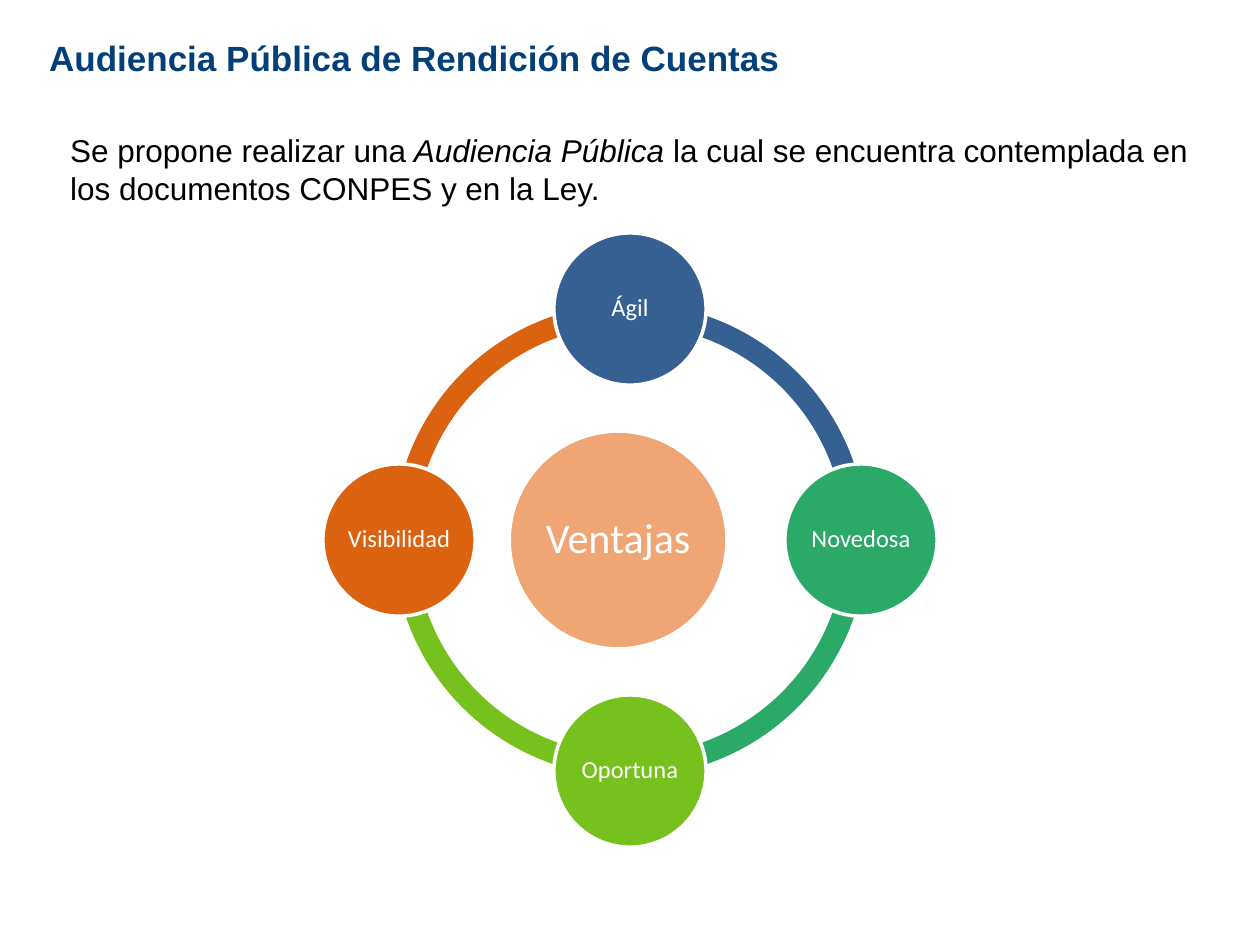
from pptx import Presentation
from pptx.dml.color import RGBColor
from pptx.enum.shapes import MSO_SHAPE
from pptx.enum.text import MSO_ANCHOR, PP_ALIGN
from pptx.util import Pt

ARC = MSO_SHAPE.BLOCK_ARC
OVAL = MSO_SHAPE.OVAL
TOP = MSO_ANCHOR.TOP
MIDDLE = MSO_ANCHOR.MIDDLE
LEFT = PP_ALIGN.LEFT
CENTER = PP_ALIGN.CENTER

COLORS = {
    "navy": "033F78",
    "black": "000000",
    "white": "FFFFFF",
    "blue": "366092",
    "teal": "2BA969",
    "green": "77C11E",
    "orange": "DB620F",
    "peach": "EFA674",
}


def color(name):
    return RGBColor.from_string(COLORS[name])


def write(frame, lines, size=18, font="Arial", ink="black", bold=False,
          align=LEFT, anchor=TOP, wrap=True, inset=None, spacing=None):
    """Fill a frame; each line is a list of (text, italic) runs."""
    frame.word_wrap = wrap
    frame.vertical_anchor = anchor
    if inset is not None:
        frame.margin_left = frame.margin_right = Pt(inset)
        frame.margin_top = frame.margin_bottom = Pt(inset)
    for i, line in enumerate(lines):
        para = frame.add_paragraph() if i else frame.paragraphs[0]
        para.alignment = align
        if spacing:
            para.line_spacing = spacing
        for text, italic in line:
            run = para.add_run()
            run.text = text
            run.font.name = font
            run.font.size = Pt(size)
            run.font.bold = bold
            run.font.italic = italic
            run.font.color.rgb = color(ink)


class Deck:
    """Holds the style and the current slide."""

    label = {"font": "Calibri", "ink": "white", "align": CENTER,
             "anchor": MIDDLE, "spacing": 0.9}
    edge = 2
    band = 0.046

    def __init__(self, width, height):
        self.prs = Presentation()
        self.prs.slide_width = Pt(width)
        self.prs.slide_height = Pt(height)
        self.slide = self.prs.slides.add_slide(self.prs.slide_layouts[6])

    def text(self, left, top, width, height, lines, **style):
        box = self.slide.shapes.add_textbox(
            Pt(left), Pt(top), Pt(width), Pt(height))
        write(box.text_frame, lines, **style)

    def round(self, kind, x, y, size, fill):
        """Add a shape of equal sides, centred on a point."""
        shape = self.slide.shapes.add_shape(
            kind, Pt(x - size / 2), Pt(y - size / 2), Pt(size), Pt(size))
        shape.shadow.inherit = False
        shape.fill.solid()
        shape.fill.fore_color.rgb = color(fill)
        return shape

    def arc(self, x, y, size, fill, start, end):
        shape = self.round(ARC, x, y, size, fill)
        shape.line.fill.background()
        # One degree is 0.6 in adjustment units
        for i, value in enumerate((start * 0.6, end * 0.6, self.band)):
            shape.adjustments[i] = value

    def disc(self, x, y, size, fill, text, points, inset):
        shape = self.round(OVAL, x, y, size, fill)
        shape.line.color.rgb = color("white")
        shape.line.width = Pt(self.edge)
        write(shape.text_frame, [[(text, False)]], size=points,
              inset=inset, **self.label)


def main():
    deck = Deck(720, 540)

    # Heading and introduction
    deck.text(21, 17.5, 525.5, 55,
              [[("Audiencia Pública de Rendición de Cuentas", False)]],
              size=20, ink="navy", bold=True)
    deck.text(33, 71.5, 678, 51, [
        [("Se propone realizar una", False),
         (" Audiencia Pública ", True),
         ("la cual se encuentra contemplada en", False)],
        [("los documentos CONPES y en la Ley.", False)],
    ], wrap=False)

    # Ring: nodes run clockwise from the top, each followed by its arc
    x, y, orbit = 360, 308.6, 132
    nodes = [
        ("Ágil", "blue", 0, -1),
        ("Novedosa", "teal", 1, 0),
        ("Oportuna", "green", 0, 1),
        ("Visibilidad", "orange", -1, 0),
    ]
    for i, (_, fill, _, _) in enumerate(nodes):
        start = (270 + 90 * i) % 360
        deck.arc(x, y, 270.7, fill, start * 180 * 1000 / 180000,
                 (start + 90) % 360)

    # Centre and nodes
    deck.disc(353.2, y, 124.4, "peach", "Ventajas", 24, 2.4)
    for text, fill, dx, dy in nodes:
        deck.disc(x + dx * orbit, y + dy * orbit, 87, fill, text, 14, 1.4)

    deck.prs.save("out.pptx")


if __name__ == "__main__":
    main()
